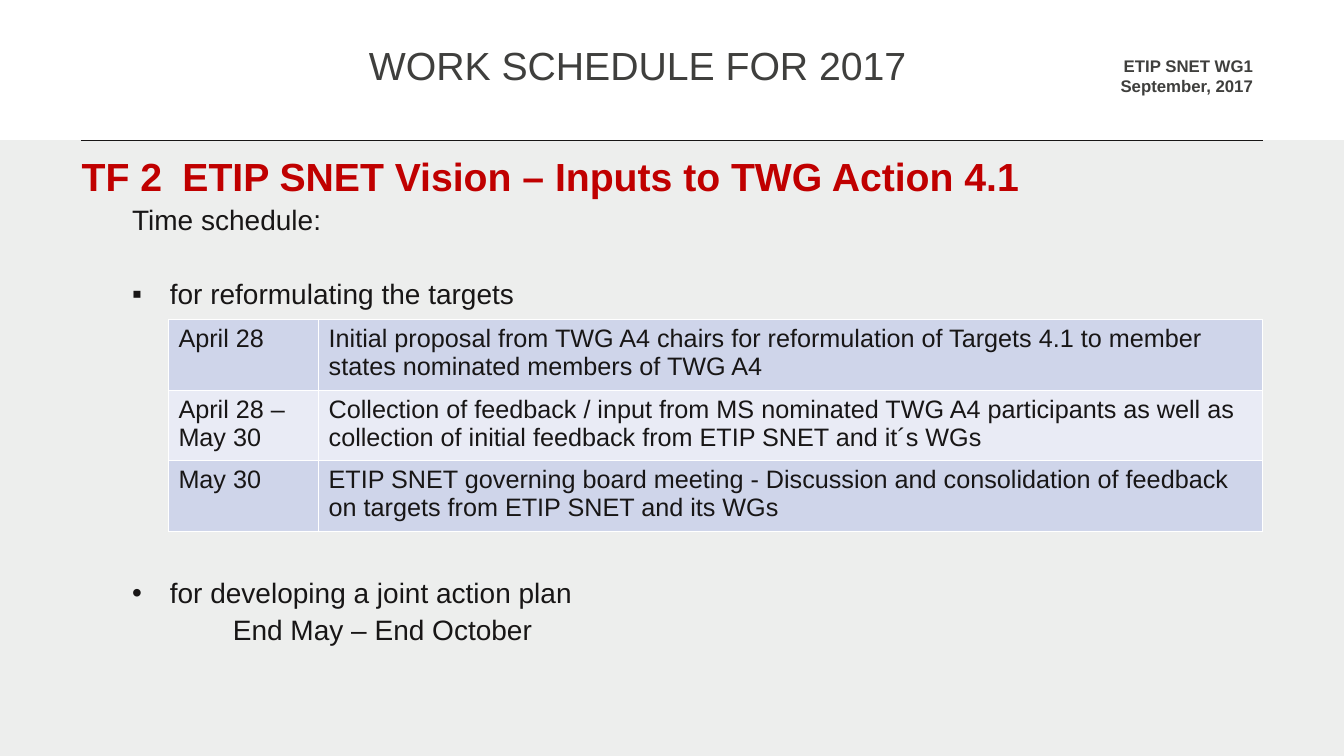
"""Builds the 2017 work schedule slide of the ETIP SNET working group."""
from lxml.etree import SubElement
from pptx import Presentation
from pptx.dml.color import RGBColor
from pptx.enum.shapes import MSO_CONNECTOR as CONNECTOR, MSO_SHAPE as SHAPE
from pptx.enum.text import MSO_ANCHOR as ANCHOR, MSO_AUTO_SIZE as AUTO_SIZE, PP_ALIGN as ALIGN
from pptx.oxml.ns import qn
from pptx.util import Pt

BACKGROUND = RGBColor(0xED, 0xEE, 0xED)
WHITE = RGBColor(0xFF, 0xFF, 0xFF)
INK = RGBColor(0x18, 0x16, 0x16)
GREY = RGBColor(0x3F, 0x3F, 0x3D)
RED = RGBColor(0xC0, 0x00, 0x00)
BAND_DARK = RGBColor(0xCF, 0xD5, 0xEA)
BAND_LIGHT = RGBColor(0xE9, 0xEB, 0xF5)


def style(paragraph, size, color, bold=False):
    for run in paragraph.runs:
        run.font.name = "Arial"
        run.font.size = Pt(size)
        run.font.bold = bold
        run.font.color.rgb = color


def place(shape, left, top, width, height):
    shape.left, shape.top = Pt(left), Pt(top)
    shape.width, shape.height = Pt(width), Pt(height)


deck = Presentation()
deck.slide_width, deck.slide_height = Pt(960), Pt(540)
slide = deck.slides.add_slide(deck.slide_layouts[1])
slide.background.fill.solid()
slide.background.fill.fore_color.rgb = BACKGROUND
title, agenda = slide.placeholders

header = slide.shapes.add_shape(SHAPE.RECTANGLE, 0, 0, Pt(960), Pt(100))
header.shadow.inherit = False
header.fill.solid()
header.fill.fore_color.rgb = WHITE
header.line.fill.background()
slide.shapes._spTree.insert(2, header._element)

rule = slide.shapes.add_connector(CONNECTOR.STRAIGHT, Pt(57.8), Pt(100), Pt(902.2), Pt(100))
rule.line.color.rgb = INK
rule.line.width = Pt(0.5)
SubElement(rule._element.spPr, qn("a:effectLst"))

place(title, 256.3, 29.5, 476.6, 42.5)
title.text_frame.text = "WORK SCHEDULE FOR 2017"
title.text_frame.vertical_anchor = ANCHOR.TOP
title.text_frame.auto_size = AUTO_SIZE.NONE
heading = title.text_frame.paragraphs[0]
heading.alignment = ALIGN.LEFT
heading.line_spacing = 0.9
style(heading, 28, GREY)

group = slide.shapes.add_textbox(Pt(528.5), Pt(36), Pt(373.7), Pt(36))
group.text_frame.word_wrap = True
group.text_frame.text = "ETIP SNET WG1\nSeptember, 2017"
for paragraph in group.text_frame.paragraphs:
    paragraph.alignment = ALIGN.RIGHT
    style(paragraph, 12, GREY, bold=True)

place(agenda, 51.1, 108.7, 859, 398)
agenda.text_frame.auto_size = AUTO_SIZE.NONE
agenda_items = [
    ("TF 2\tETIP SNET Vision – Inputs to TWG Action 4.1", 0, 0, 0, None),
    ("Time schedule:", 1, 36, 5, None),
    ("for reformulating the targets", 1, 63, 31.4, "▪"),
    ("for developing a joint action plan", 1, 63, 191.4, "•"),
    ("End May – End October", 1, 108, 5, None),
]
agenda.text_frame.text = "\n".join(item[0] for item in agenda_items)
for paragraph, (_, level, margin, gap, bullet) in zip(agenda.text_frame.paragraphs, agenda_items):
    paragraph.level = level
    paragraph.line_spacing = 0.9
    paragraph.space_before = Pt(gap)
    properties = paragraph._p.get_or_add_pPr()
    properties.set("marL", str(Pt(margin)))
    properties.set("indent", str(Pt(-27 if bullet else 0)))
    if bullet:
        SubElement(properties, qn("a:buFont"), typeface="Arial")
        SubElement(properties, qn("a:buChar"), char=bullet)
    else:
        SubElement(properties, qn("a:buNone"))
    if level:
        style(paragraph, 20, INK)
    else:
        tabs = SubElement(properties, qn("a:tabLst"))
        SubElement(tabs, qn("a:tab"), pos=str(Pt(80.7)), algn="l")
        style(paragraph, 28, RED, bold=True)

milestones = [
    ("April 28", "Initial proposal from TWG A4 chairs for reformulation of Targets 4.1 "
     "to member states nominated members of TWG A4"),
    ("April 28 – May 30", "Collection of feedback / input from MS nominated TWG A4 participants "
     "as well as collection of initial feedback from ETIP SNET and it´s WGs"),
    ("May 30", "ETIP SNET governing board meeting - Discussion and consolidation of feedback "
     "on targets from ETIP SNET and its WGs"),
]
schedule = slide.shapes.add_table(3, 2, Pt(120.3), Pt(228.3), Pt(781.3), Pt(142.8)).table
schedule.first_row = False
schedule.columns[0].width, schedule.columns[1].width = Pt(107.3), Pt(674)
for row, milestone in enumerate(milestones):
    for column, text in enumerate(milestone):
        cell = schedule.cell(row, column)
        cell.text_frame.text = text
        style(cell.text_frame.paragraphs[0], 18, INK)
        for side in ("lnL", "lnR", "lnT", "lnB"):
            border = SubElement(cell._tc.get_or_add_tcPr(), qn(f"a:{side}"), w=str(Pt(1)))
            SubElement(SubElement(border, qn("a:solidFill")), qn("a:srgbClr"), val=str(WHITE))
        cell.fill.solid()
        cell.fill.fore_color.rgb = BAND_LIGHT if row % 2 else BAND_DARK

deck.save("out.pptx")
